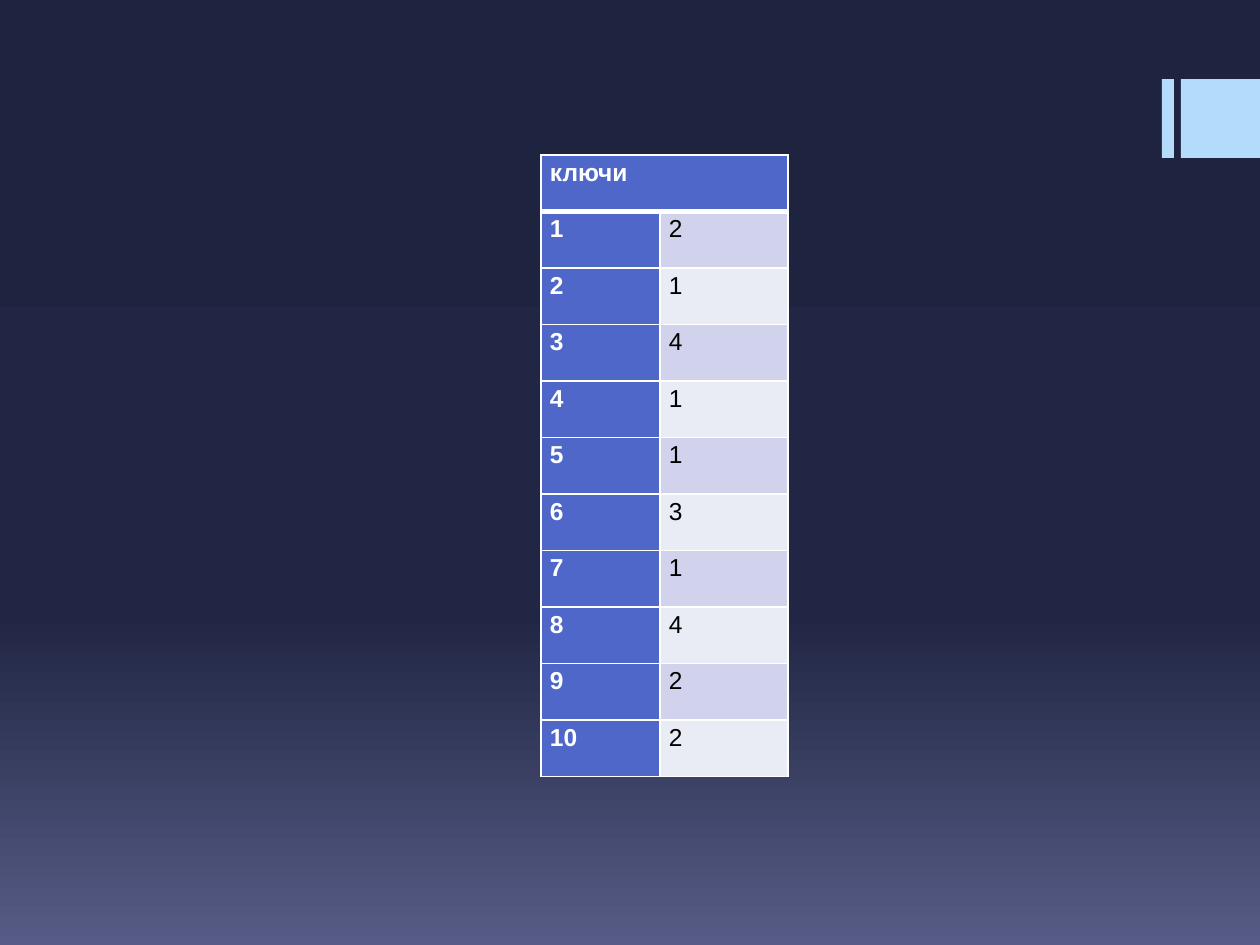
from copy import deepcopy

from lxml import etree
from pptx import Presentation
from pptx import util as u
from pptx.dml.color import RGBColor
from pptx.enum import shapes
from pptx.oxml.ns import qn

SCALE = 914400 / 126  # EMU in one px
WHITE, BLACK, BLUE, SKY = "FFFFFF", "000000", "4E67C8", "B4DCFA"
BANDS = "D0D3EB", "E9EBF5"
STOPS = (0, "1E233F"), (0.65, "202643"), (1, "575C86")
KEYS = 2, 1, 4, 1, 1, 3, 1, 4, 2, 2


def px(n):
    return u.Emu(round(n * SCALE))


def rgb(code):
    return RGBColor.from_string(code)


def paint(part, code):
    part.fill.solid()
    part.fill.fore_color.rgb = rgb(code)


def shade(slide):
    """Fill the background from top to bottom."""
    fill = slide.background.fill
    fill.gradient()
    fill.gradient_angle = 270
    first = slide.element.xpath(".//a:gs")[0]
    first.addnext(deepcopy(first))
    for stop, (place, code) in zip(fill.gradient_stops, STOPS):
        stop.position = place
        stop.color.rgb = rgb(code)


def bar(slide, left, top, width, height):
    shape = slide.shapes.add_shape(
        shapes.MSO_SHAPE.RECTANGLE, px(left), px(top), px(width), px(height))
    shape.shadow.inherit = False
    paint(shape, SKY)
    shape.line.fill.background()


def edge(cell, side, width):
    """Draw one white border of a cell."""
    line = etree.SubElement(cell._tc.get_or_add_tcPr(), qn(f"a:ln{side}"),
                            w=str(u.Pt(width)))
    fill = etree.SubElement(line, qn("a:solidFill"))
    etree.SubElement(fill, qn("a:srgbClr"), val=WHITE)


def style(cell, words, back, ink, bold, top=1, base=1):
    for side, width in zip("LRTB", (1, 1, top, base)):
        edge(cell, side, width)
    paint(cell, back)
    cell.margin_left = cell.margin_right = px(9)
    cell.margin_top = cell.margin_bottom = 0
    para = cell.text_frame.paragraphs[0]
    para.line_spacing = 1.15
    if words:
        run = para.add_run()
        run.text = words
        font = run.font
        font.name, font.size, font.bold = "Arial", u.Pt(14), bold
        font.color.rgb = rgb(ink)


def grid(slide):
    """Build the answer key under a merged heading."""
    rows = len(KEYS) + 1
    table = slide.shapes.add_table(
        rows, 2, px(541), px(155), px(247), px(622)).table
    table.first_row = table.horz_banding = False
    for col, width in zip(table.columns, (119, 128)):
        col.width = px(width)
    for row in table.rows:
        row.height = px(622) // rows

    # Heading
    table.cell(0, 0).merge(table.cell(0, 1))
    for col, words in enumerate(("ключи", "")):
        style(table.cell(0, col), words, BLUE, WHITE, True, base=3)

    # Question numbers and answers
    for n, key in enumerate(KEYS, 1):
        top = 3 if n == 1 else 1
        style(table.cell(n, 0), str(n), BLUE, WHITE, True, top)
        style(table.cell(n, 1), str(key), BANDS[(n - 1) % 2], BLACK, False, top)


def main():
    deck = Presentation()
    deck.slide_width, deck.slide_height = px(1260), px(945)
    slide = deck.slides.add_slide(deck.slide_layouts[6])
    shade(slide)
    # Corner marks
    bar(slide, 1162, 79, 12, 79)
    bar(slide, 1181, 79, 79, 79)
    grid(slide)
    deck.save("out.pptx")


if __name__ == "__main__":
    main()
